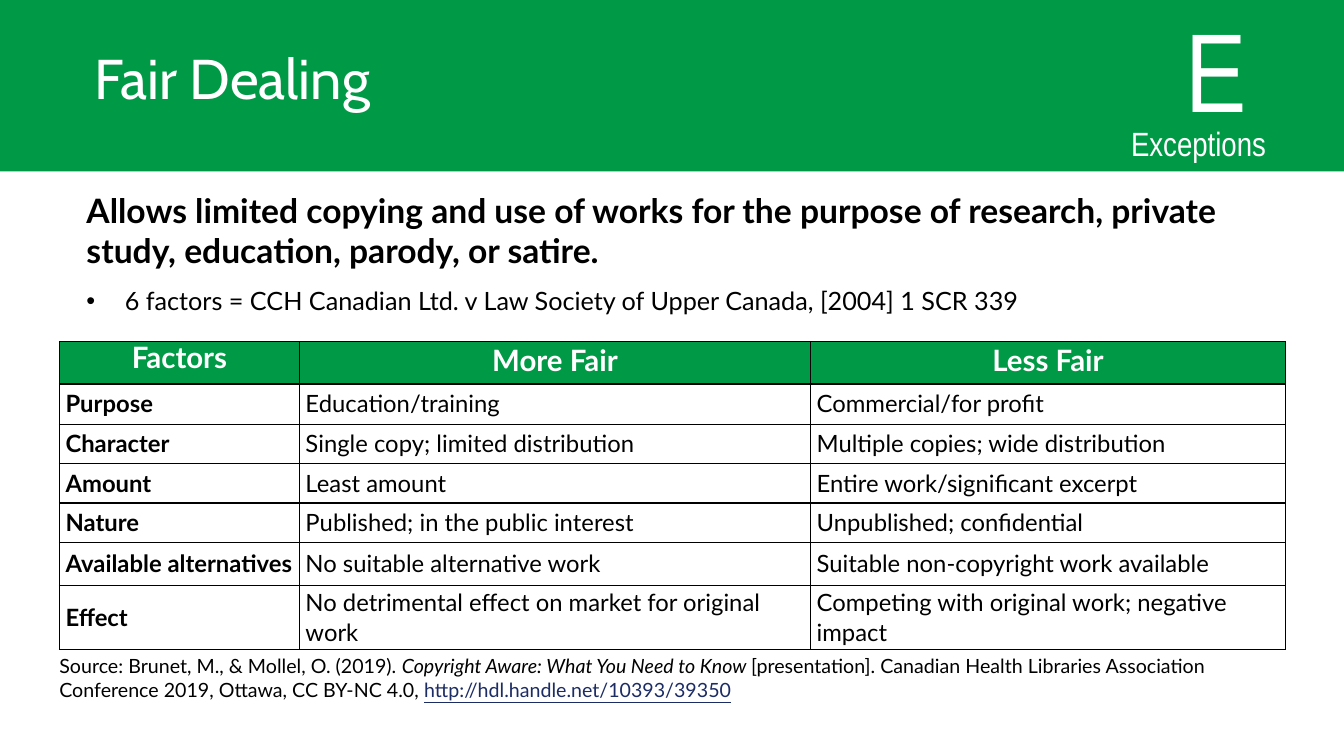
from dataclasses import dataclass

from lxml import etree
from pptx import Presentation
from pptx import util as u
from pptx.dml import color
from pptx.enum import shapes, text
from pptx.oxml import ns


@dataclass(frozen=True)
class Theme:
    green: str = "009A46"
    white: str = "FFFFFF"
    black: str = "000000"
    link: str = "1C2C64"
    title_font: str = "Cabin"
    badge_font: str = "Arial Narrow"
    body_font: str = "Lato"
    letter_size: int = 80
    title_size: int = 40
    lead_size: int = 24
    header_size: int = 21
    point_size: int = 18
    cell_size: int = 17
    source_size: int = 14


T = Theme()

FACTORS = [
    ("Factors", "More Fair", "Less Fair"),
    ("Purpose", "Education/training", "Commercial/for profit"),
    ("Character", "Single copy; limited distribution", "Multiple copies; wide distribution"),
    ("Amount", "Least amount", "Entire work/significant excerpt"),
    ("Nature", "Published; in the public interest", "Unpublished; confidential"),
    ("Available alternatives", "No suitable alternative work", "Suitable non-copyright work available"),
    ("Effect", "No detrimental effect on market for original work",
     "Competing with original work; negative impact"),
]
COLUMN_WIDTHS = (2.38, 5.07, 4.71)
ROW_HEIGHTS = (0.42, 0.4, 0.39, 0.39, 0.39, 0.43, 0.39)


def add_run(p, words, size, rgb=T.black, name=T.body_font, **formats):
    r = p.add_run()
    r.text = words
    r.font.color.rgb = color.RGBColor.from_string(rgb)
    for key, value in {"size": u.Pt(size), "name": name, **formats}.items():
        setattr(r.font, key, value)


def add_text_frame(s, left, top, width, height, anchor=text.MSO_ANCHOR.TOP):
    box = s.shapes.add_textbox(*map(u.Inches, (left, top, width, height)))
    tf = box.text_frame
    tf.word_wrap = True
    tf.vertical_anchor = anchor
    return tf


def add_bullet(p, indent):
    pPr = p._p.get_or_add_pPr()
    pPr.set("marL", str(u.Inches(indent)))
    pPr.set("indent", str(-u.Inches(indent)))
    bu_color = etree.SubElement(pPr, ns.qn("a:buClr"))
    etree.SubElement(bu_color, ns.qn("a:srgbClr"), val=T.black)
    etree.SubElement(pPr, ns.qn("a:buFont"), typeface="Arial")
    etree.SubElement(pPr, ns.qn("a:buChar"), char="•")


def add_borders(cell):
    tcPr = cell._tc.get_or_add_tcPr()
    for side in ("lnL", "lnR", "lnT", "lnB"):
        ln = etree.SubElement(tcPr, ns.qn(f"a:{side}"), w=str(u.Pt(1)))
        fill = etree.SubElement(ln, ns.qn("a:solidFill"))
        etree.SubElement(fill, ns.qn("a:srgbClr"), val=T.black)


def add_header(s, left, top, width, height):
    """Green band with the title on the left and the lettered badge on the right."""
    sp = s.shapes.add_shape(shapes.MSO_SHAPE.RECTANGLE, *map(u.Inches, (left, top, width, height)))
    sp.shadow.inherit = False
    sp.fill.solid()
    sp.fill.fore_color.rgb = color.RGBColor.from_string(T.green)
    sp.line.fill.background()

    tf = add_text_frame(s, left + 0.84, top + 0.31, 6.33, 0.84, text.MSO_ANCHOR.BOTTOM)
    add_run(tf.paragraphs[0], "Fair Dealing", T.title_size, T.white, T.title_font)

    right = left + width
    badge = (
        ("E", T.letter_size, (right - 1.67, top - 0.04, 1.1, 1.45)),
        ("Exceptions", T.lead_size, (right - 2.21, top + 1.17, 1.8, 0.57)),
    )
    for words, size, box in badge:
        tf = add_text_frame(s, *box)
        add_run(tf.paragraphs[0], words, size, T.white, T.badge_font)


def add_summary(s, left, top, width, height):
    tf = add_text_frame(s, left, top, width, height)
    add_run(tf.paragraphs[0], "Allows limited copying and use of works for the purpose of research, "
            "private study, education, parody, or satire.", T.lead_size, bold=True)
    p = tf.add_paragraph()
    p.space_before = u.Pt(10.8)
    add_bullet(p, 0.38)
    add_run(p, "6 factors = CCH Canadian Ltd. v Law Society of Upper Canada, [2004] 1 SCR 339",
            T.point_size)


def fill_cell(cell, words, row, col):
    is_header = row == 0
    margins = {"margin_left": 0.06, "margin_right": 0.06, "margin_top": 0, "margin_bottom": 0.03}
    for key, value in margins.items():
        setattr(cell, key, u.Inches(value))
    cell.vertical_anchor = text.MSO_ANCHOR.MIDDLE
    add_borders(cell)
    p = cell.text_frame.paragraphs[0]
    if is_header:
        cell.fill.solid()
        cell.fill.fore_color.rgb = color.RGBColor.from_string(T.green)
        p.alignment = text.PP_ALIGN.CENTER
        p.line_spacing = u.Pt(24 if col else 19.5)
        add_run(p, words, T.header_size, T.white, bold=True)
    else:
        cell.fill.background()
        p.line_spacing = u.Pt(21.8)
        add_run(p, words, T.cell_size, bold=col == 0)


def add_factor_table(s, left, top):
    box = (left, top, sum(COLUMN_WIDTHS), sum(ROW_HEIGHTS))
    frame = s.shapes.add_table(len(FACTORS), len(COLUMN_WIDTHS), *map(u.Inches, box))
    table = frame.table
    table.first_row = table.horz_banding = False
    for column, width in zip(table.columns, COLUMN_WIDTHS):
        column.width = u.Inches(width)
    for i, (height, row) in enumerate(zip(ROW_HEIGHTS, FACTORS)):
        table.rows[i].height = u.Inches(height)
        for j, words in enumerate(row):
            fill_cell(table.cell(i, j), words, i, j)


def add_source(s, left, top, width, height):
    p = add_text_frame(s, left, top, width, height).paragraphs[0]
    add_run(p, "Source: Brunet, M., & Mollel, O. (2019). ", T.source_size)
    add_run(p, "Copyright Aware: What You Need to Know ", T.source_size, italic=True)
    add_run(p, "[presentation]. Canadian Health Libraries Association Conference 2019, "
            "Ottawa, CC BY-NC 4.0, ", T.source_size)
    add_run(p, "http://hdl.handle.net/10393/39350", T.source_size, T.link, underline=True)


def main():
    prs = Presentation()
    prs.slide_width, prs.slide_height = u.Inches(13.33), u.Inches(7.5)
    s = prs.slides.add_slide(prs.slide_layouts[6])
    add_header(s, 0, 0, 13.33, 1.7)
    add_summary(s, 0.76, 1.83, 11.77, 1.39)
    add_factor_table(s, 0.59, 3.39)
    add_source(s, 0.49, 6.44, 12.42, 0.57)
    prs.save("out.pptx")


if __name__ == "__main__":
    main()
